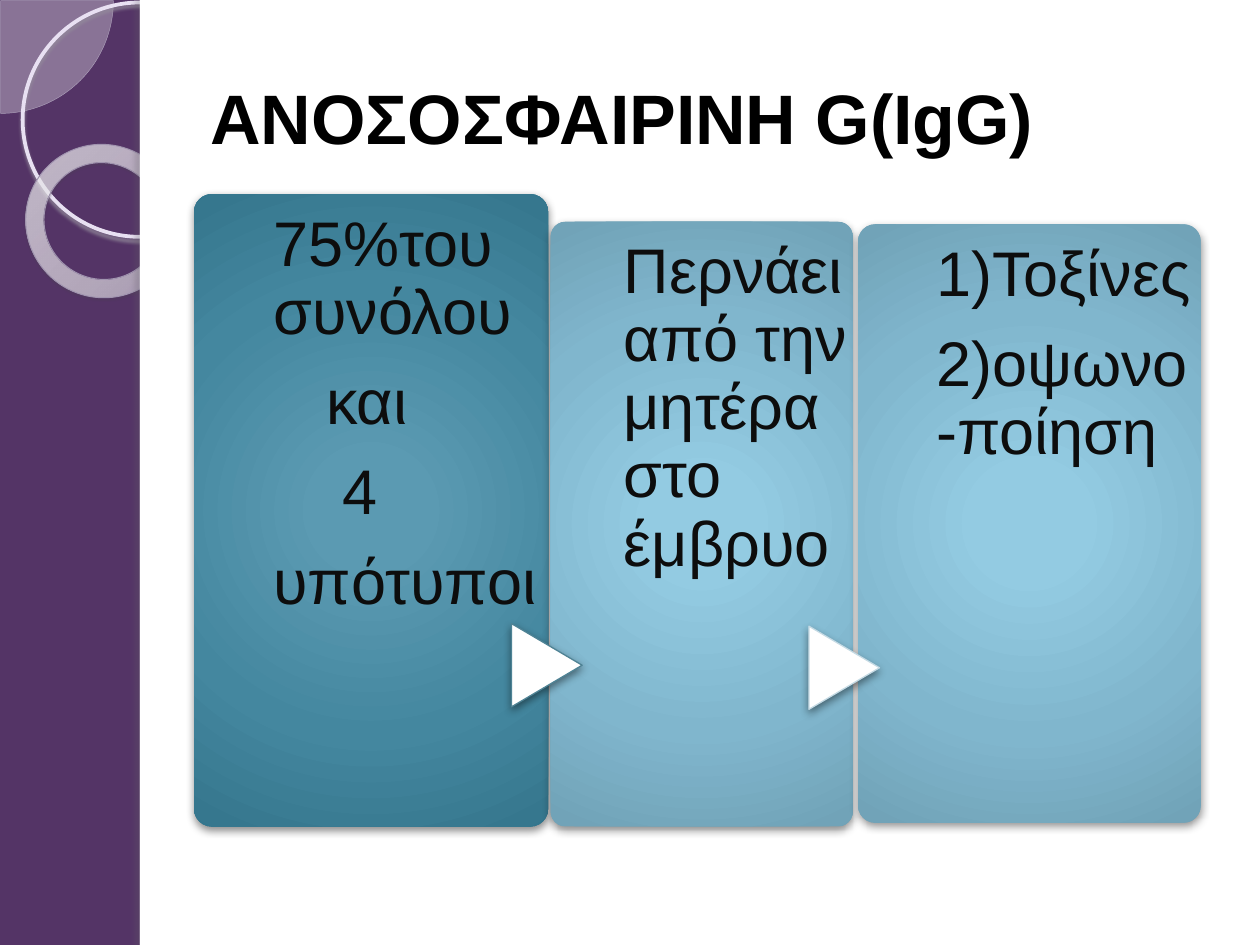
"""Build the slide on immunoglobulin G: three linked cards beside a decorated band."""
from lxml.etree import SubElement
from pptx import Presentation
from pptx.dml.color import RGBColor
from pptx.enum.shapes import MSO_SHAPE as SHAPE
from pptx.enum.text import MSO_ANCHOR as ANCHOR, PP_ALIGN as ALIGN
from pptx.oxml.ns import qn
from pptx.util import Inches, Pt

COLORS = {
    "band": "543466", "white": "FFFFFF", "title": "000000", "text": "0D0D0D",
    "pie": "F6F4F9", "pie_line": "ACA0B9", "ring_line": "E8E0F2",
    "donut_line": "A094AF", "dark_arrow_line": "4F8395", "light_arrow_line": "C4DAE4",
}
SHADOWS = {
    "ring": ("958D9D", 85, 2, 2, 90), "donut": ("4A4550", 35, 1, 1.2, 75),
    "edge": ("646068", 25, 3, 3, 180), "card": ("000000", 43, 5, 2, 90),
}
DARK = [(0, "5B9AB3", 100), (15, "5B9AB2", 100), (62, "44879F", 100),
        (97, "36778E", 100), (100, "2D748D", 100)]
LIGHT = [(0, "94CBE3", 100), (15, "93CBE2", 100), (62, "80B6CD", 100),
         (97, "71A3B8", 100), (100, "6DA1B7", 100)]
DONUT = [(0, "F9F7FB", 70), (70, "FCFBFE", 55), (100, "B099CA", 60)]


def add_color(parent, color, alpha):
    """Add an RGB colour with its opacity in percent."""
    element = SubElement(parent, qn("a:srgbClr"), val=color)
    SubElement(element, qn("a:alpha"), val=str(alpha * 1000))


def draw(preset, box, stops=None, focus=(50, 50, 50, 50), line=None, width=0, shadow=None):
    """Add a preset shape with an optional radial fill, outline and shadow."""
    shape = slide.shapes.add_shape(preset, *map(Inches, box))
    properties = shape._element.spPr
    shape.fill.background()
    if stops:
        gradient = properties.makeelement(qn("a:gradFill"), rotWithShape="1")
        stop_list = SubElement(gradient, qn("a:gsLst"))
        for position, color, alpha in stops:
            stop = SubElement(stop_list, qn("a:gs"), pos=str(position * 1000))
            add_color(stop, color, alpha)
        circle = SubElement(gradient, qn("a:path"), path="circle")
        sides = {side: str(value * 1000) for side, value in zip("ltrb", focus)}
        SubElement(circle, qn("a:fillToRect"), **sides)
        properties.replace(properties.find(qn("a:noFill")), gradient)
    if line:
        shape.line.color.rgb = RGBColor.from_string(COLORS[line])
        shape.line.width = Pt(width)
    else:
        shape.line.fill.background()
    shape.shadow.inherit = False
    if shadow:
        color, alpha, blur, distance, angle = SHADOWS[shadow]
        outer = SubElement(properties.find(qn("a:effectLst")), qn("a:outerShdw"),
                           blurRad=str(Pt(blur)), dist=str(Pt(distance)),
                           dir=str(angle * 60000), rotWithShape="0")
        add_color(outer, color, alpha)
    return shape


presentation = Presentation()
presentation.slide_width, presentation.slide_height = Inches(10), Inches(7.5)
slide = presentation.slides.add_slide(presentation.slide_layouts[5])
slide.background.fill.solid()
slide.background.fill.fore_color.rgb = RGBColor.from_string(COLORS["band"])

pie = draw(SHAPE.PIE, (-0.89, -0.89, 1.79, 1.79), line="pie_line", width=0.25)
pie.adjustments[0], pie.adjustments[1] = 0, 54
pie.fill.solid()
pie.fill.fore_color.rgb = RGBColor.from_string(COLORS["pie"])
pie_color = pie._element.spPr.find(qn("a:solidFill")).find(qn("a:srgbClr"))
SubElement(pie_color, qn("a:alpha"), val="33000")

draw(SHAPE.OVAL, (0.18, 0.02, 1.86, 1.86), line="ring_line", width=2.15, shadow="ring")
donut = draw(SHAPE.DONUT, (0.2, 1.15, 1.23, 1.21), DONUT, (-408, -50, 508, 150),
             "donut_line", 0.58, "donut")
donut.adjustments[0] = 0.12
donut.rotation = 38.6

for box, shadow in [((1.11, 0, 8.89, 7.5), None), ((1.11, 0, 0.08, 7.5), "edge")]:
    panel = draw(SHAPE.RECTANGLE, box, shadow=shadow)
    panel.fill.solid()
    panel.fill.fore_color.rgb = RGBColor.from_string(COLORS["white"])

title = slide.shapes.title
slide.shapes._spTree.append(title._element)
title.left, title.top, title.width, title.height = map(Inches, (1.57, 0.3, 8.2, 1.25))
title.text_frame.vertical_anchor = ANCHOR.MIDDLE
paragraph = title.text_frame.paragraphs[0]
paragraph.alignment = ALIGN.LEFT
run = paragraph.add_run()
run.text = "ΑΝΟΣΟΣΦΑΙΡΙΝΗ G(IgG)"
run.font.name, run.font.size, run.font.bold = "Arial", Pt(40), True
run.font.color.rgb = RGBColor.from_string(COLORS["title"])

cards = [
    ((1.54, 1.54, 2.81, 5.02), DARK, None, (2.17, 2.1),
     [("75%του συνόλου", 0), ("και", 0.42), ("4", 0.55), ("υπότυποι", 0)]),
    ((4.37, 1.76, 2.4, 4.8), LIGHT, (4.01, 5, "dark_arrow_line"), (4.95, 1.79),
     [("Περνάει από την μητέρα στο έμβρυο", 0)]),
    ((6.81, 1.78, 2.72, 4.75), LIGHT, (6.37, 5.02, "light_arrow_line"), (7.43, 2.03),
     [("1)Τοξίνες", 0), ("2)οψωνο-ποίηση", 0)]),
]
for box, stops, arrow, (text_left, text_width), lines in cards:
    card = draw(SHAPE.ROUNDED_RECTANGLE, box, stops, shadow="card")
    card.adjustments[0] = 0.05
    if arrow:
        left, top, outline = arrow
        triangle = draw(SHAPE.FLOWCHART_EXTRACT, (left, top, 0.66, 0.56),
                        line=outline, width=0.75, shadow="card")
        triangle.rotation = 90
        triangle.fill.solid()
        triangle.fill.fore_color.rgb = RGBColor.from_string(COLORS["white"])
    text_box = slide.shapes.add_textbox(
        Inches(text_left), Inches(box[1]), Inches(text_width), Inches(box[3]))
    frame = text_box.text_frame
    frame.word_wrap = True
    frame.margin_left = frame.margin_right = frame.margin_bottom = 0
    frame.margin_top = Inches(0.14)
    for index, (text, indent) in enumerate(lines):
        paragraph = frame.add_paragraph() if index else frame.paragraphs[0]
        paragraph.line_spacing = 0.9
        paragraph.space_after = Pt(12.6)
        paragraph._p.get_or_add_pPr().set("marL", str(Inches(indent)))
        run = paragraph.add_run()
        run.text = text
        run.font.name, run.font.size = "Arial", Pt(36)
        run.font.color.rgb = RGBColor.from_string(COLORS["text"])

presentation.save("out.pptx")
